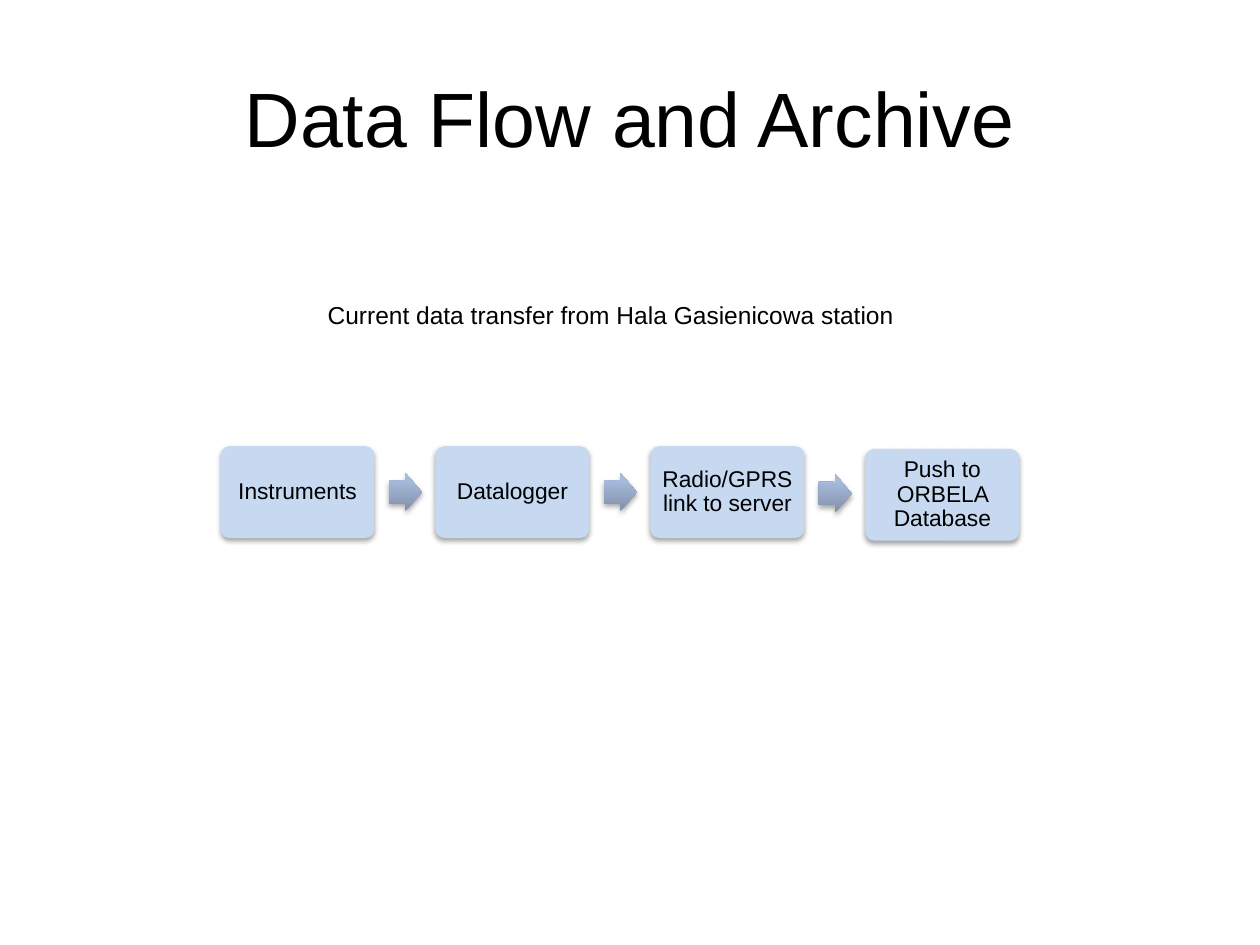
from lxml import etree
from pptx import Presentation
from pptx.dml.color import RGBColor
from pptx.enum.shapes import MSO_SHAPE
from pptx.enum.text import MSO_ANCHOR, MSO_AUTO_SIZE, PP_ALIGN
from pptx.oxml.ns import qn
from pptx.util import Pt

BLACK = RGBColor(0x00, 0x00, 0x00)
PALE_BLUE = RGBColor(0xC6, 0xD9, 0xF1)
ARROW_DARK = RGBColor(0x81, 0x8F, 0xA8)
ARROW_LIGHT = RGBColor(0xA7, 0xBA, 0xDC)
ROUNDED = MSO_SHAPE.ROUNDED_RECTANGLE
ARROW = MSO_SHAPE.RIGHT_ARROW
CENTER = PP_ALIGN.CENTER
MIDDLE = MSO_ANCHOR.MIDDLE
NO_AUTOFIT = MSO_AUTO_SIZE.NONE
GROW = MSO_AUTO_SIZE.SHAPE_TO_FIT_TEXT

FONT = "Arial"
STEPS = ["Instruments", "Datalogger", "Radio/GPRS link to server",
         "Push to ORBELA Database"]
STEP_WIDTH, STEP_HEIGHT = 88, 52.5
ARROW_WIDTH, ARROW_HEIGHT = 18.9, 21.8
LAST_STEP_DROP = 1.5


def place(shape, left, top, width, height):
    shape.left, shape.top = Pt(left), Pt(top)
    shape.width, shape.height = Pt(width), Pt(height)


def set_text(frame, text, size):
    frame.text = text
    para = frame.paragraphs[0]
    para.font.name = FONT
    para.font.size = Pt(size)
    para.font.color.rgb = BLACK
    return para


def add_soft_shadow(shape):
    shape.shadow.inherit = False
    effects = shape._element.spPr.find(qn("a:effectLst"))
    shadow = etree.SubElement(effects, qn("a:outerShdw"), blurRad=str(Pt(3.1)),
                              dist=str(Pt(1.8)), dir="5400000", rotWithShape="0")
    color = etree.SubElement(shadow, qn("a:srgbClr"), val="000000")
    etree.SubElement(color, qn("a:alpha"), val="35000")


def add_part(page, kind, left, top, width, height):
    shape = page.shapes.add_shape(kind, Pt(left), Pt(top), Pt(width), Pt(height))
    shape.line.fill.background()
    add_soft_shadow(shape)
    return shape


def add_step(page, text, left, top):
    box = add_part(page, ROUNDED, left, top, STEP_WIDTH, STEP_HEIGHT)
    box.adjustments[0] = 0.1
    box.fill.solid()
    box.fill.fore_color.rgb = PALE_BLUE
    frame = box.text_frame
    frame.word_wrap = True
    frame.vertical_anchor = MIDDLE
    frame.margin_left = frame.margin_right = Pt(2)
    frame.margin_top = frame.margin_bottom = Pt(2)
    para = set_text(frame, text, 13)
    para.alignment = CENTER
    para.line_spacing = 0.9


def add_arrow(page, left, top):
    arrow = add_part(page, ARROW, left, top, ARROW_WIDTH, ARROW_HEIGHT)
    arrow.adjustments[0] = 0.6
    arrow.adjustments[1] = 0.5
    arrow.fill.gradient()
    arrow.fill.gradient_angle = 90
    dark, light = arrow.fill.gradient_stops
    dark.color.rgb, dark.position = ARROW_DARK, 0
    light.color.rgb, light.position = ARROW_LIGHT, 0.8
    return arrow


def add_title(page, left, top, width, height):
    title = page.shapes.title
    place(title, left, top, width, height)
    title.text_frame.vertical_anchor = MIDDLE
    title.text_frame.auto_size = NO_AUTOFIT
    set_text(title.text_frame, "Data Flow and Archive", 44).alignment = CENTER


def add_caption(page, left, top, width, height):
    caption = page.placeholders[1]
    place(caption, left, top, width, height)
    caption.text_frame.auto_size = GROW
    para = set_text(caption.text_frame,
                    "Current data transfer from Hala Gasienicowa station", 14)
    para.space_before = Pt(2.8)
    # Hanging indent without a bullet
    properties = para._p.get_or_add_pPr()
    properties.set("marL", str(Pt(27)))
    properties.set("indent", str(Pt(-27)))
    etree.SubElement(properties, qn("a:buNone"))
    properties.append(properties.find(qn("a:defRPr")))


def add_flow(page, left, top, width):
    pitch = (width - STEP_WIDTH) / (len(STEPS) - 1)
    arrow_top = top + (STEP_HEIGHT - ARROW_HEIGHT) / 2
    last = len(STEPS) - 1
    for index, text in enumerate(STEPS):
        step_left = left + index * pitch
        drop = LAST_STEP_DROP if index == last else 0
        if index:
            arrow = add_arrow(page, step_left - 26.6, arrow_top + drop / 2)
            arrow.rotation = 0.7 if drop else 0
        add_step(page, text, step_left, top + drop)


def main():
    deck = Presentation()
    deck.slide_width, deck.slide_height = Pt(720), Pt(540)
    page = deck.slides.add_slide(deck.slide_layouts[1])
    add_title(page, 36, 21.6, 648, 90)
    add_flow(page, 126, 255, 456.5)
    add_caption(page, 180, 167.8, 648, 24.5)
    deck.save("out.pptx")


if __name__ == "__main__":
    main()
